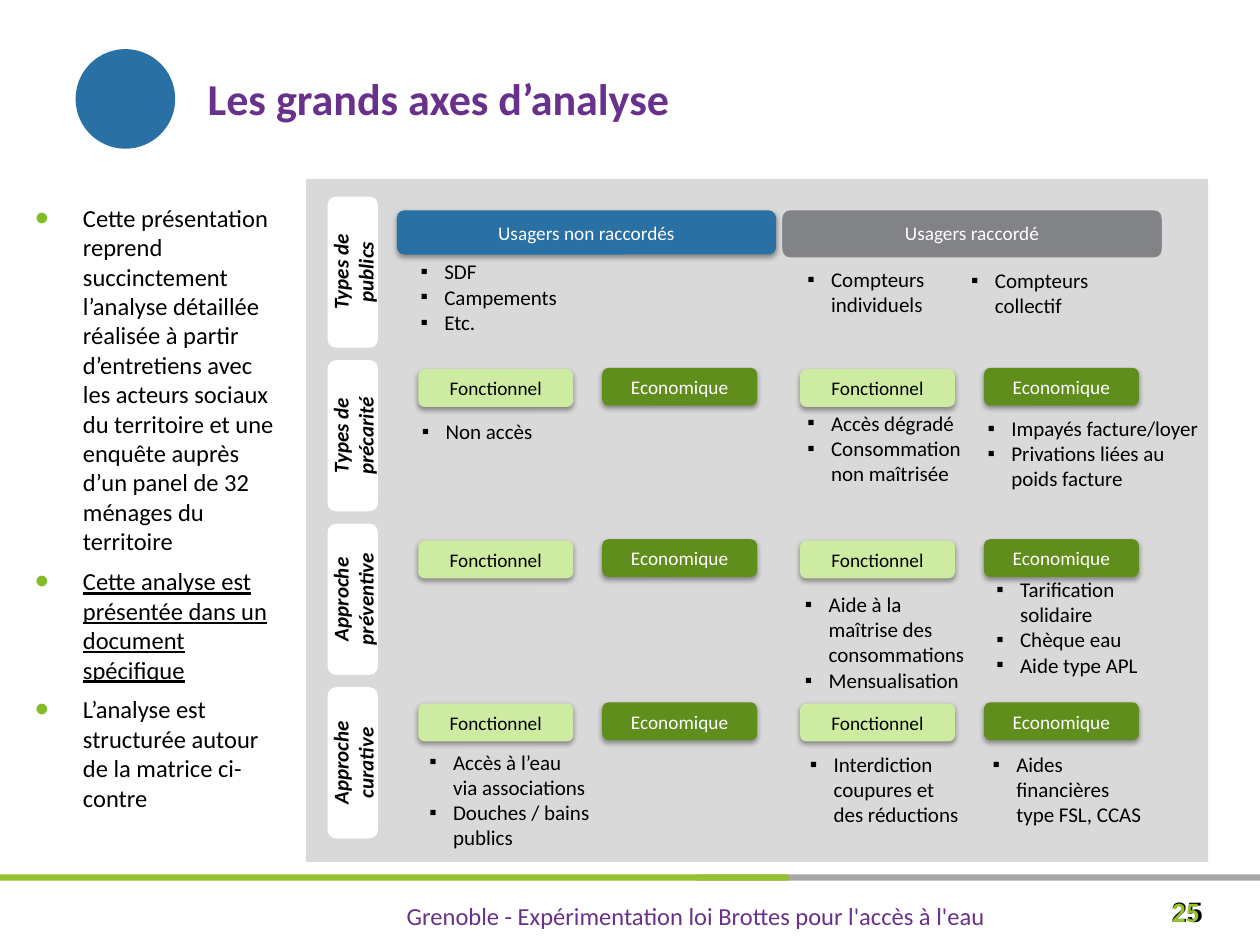
from itertools import product

from lxml.etree import SubElement
from pptx import Presentation
from pptx.dml.color import RGBColor
from pptx.enum.shapes import MSO_SHAPE
from pptx.enum.text import MSO_ANCHOR, PP_ALIGN
from pptx.oxml.ns import qn
from pptx.util import Inches, Pt

# The slide is a grid of 100 columns by 75 rows
COLUMNS, ROWS = 100, 75
deck = Presentation()
deck.slide_width, deck.slide_height = Inches(10), Inches(7.5)
COLUMN, ROW = deck.slide_width / COLUMNS, deck.slide_height / ROWS
slide = deck.slides.add_slide(deck.slide_layouts[6])

BLUE, GREEN, PURPLE, GREY = "2970A5", "94C12F", "69318B", "818386"
BLACK, WHITE = "000000", "FFFFFF"


def write(frame, lines, color, size, align=None, bullet=None, anchor=MSO_ANCHOR.MIDDLE,
          space=0, **style):
    """Fill a text frame; bullet is (character, indent in columns, {tag: attributes})."""
    frame.word_wrap = True
    frame.vertical_anchor = anchor
    for number, line in enumerate(lines):
        paragraph = frame.paragraphs[0] if number == 0 else frame.add_paragraph()
        paragraph.text = line
        if align:
            paragraph.alignment = align
        if number and space:
            paragraph.space_before = Pt(space)
        if bullet:
            character, indent, marks = bullet
            properties = paragraph._p.get_or_add_pPr()
            properties.set("marL", str(int(indent * COLUMN)))
            properties.set("indent", str(-int(indent * COLUMN)))
            if "color" in marks:
                clr = SubElement(properties, qn("a:buClr"))
                SubElement(clr, qn("a:srgbClr"), val=marks["color"])
                SubElement(properties, qn("a:buSzPct"), val=marks["size"])
            SubElement(properties, qn("a:buFont"), typeface="Arial")
            SubElement(properties, qn("a:buChar"), char=character)
        font = paragraph.runs[0].font
        for key, value in {"name": "Calibri", "size": Pt(size), **style}.items():
            setattr(font, key, value)
        font.color.rgb = RGBColor.from_string(color)


def block(kind, left, top, width, height, fill, blur=None):
    """Draw a filled shape without a line; blur in points adds a soft drop shadow."""
    shape = slide.shapes.add_shape(kind, int(left * COLUMN), int(top * ROW),
                                   int(width * COLUMN), int(height * ROW))
    shape.shadow.inherit = False
    shape.fill.solid()
    shape.fill.fore_color.rgb = RGBColor.from_string(fill)
    shape.line.fill.background()
    if blur is not None:
        effects = shape._element.spPr.find(qn("a:effectLst"))
        shadow = SubElement(effects, qn("a:outerShdw"), blurRad=str(Pt(blur)),
                            dist=str(Pt(1.6)), dir="5400000", rotWithShape="0")
        tone = SubElement(shadow, qn("a:srgbClr"), val=BLACK)
        SubElement(tone, qn("a:alpha"), val="38000")
    return shape


# Footer bars, title disc and matrix background
for kind, left, top, width, height, fill in [
    (MSO_SHAPE.RECTANGLE, 0, 69.4, 62.6, 0.5, GREEN),
    (MSO_SHAPE.RECTANGLE, 55.3, 69.4, 44.7, 0.5, "A6A6A6"),
    (MSO_SHAPE.OVAL, 6, 3.9, 7.9, 7.9, BLUE),
    (MSO_SHAPE.RECTANGLE, 24.3, 14.2, 71.6, 54.2, "D9D9D9"),
]:
    bar = block(kind, left, top, width, height, fill)
    if left == 55.3:
        # The green bar lies over the grey one
        green_bar = slide.shapes[0]._element
        bar._element.addnext(green_bar)

# Title, footer and the doubled page number
for left, top, width, height, line, color, size, style in [
    (15.5, 5.2, 84.5, 5.1, "Les grands axes d’analyse", PURPLE, 25.2, {"bold": True}),
    (31.3, 71, 59.6, 3.6, "Grenoble - Expérimentation loi Brottes pour l'accès à l'eau",
     PURPLE, 14, {}),
    (92, 70.5, 8, 4, "25", BLACK, 16, {"bold": True, "name": "Arial"}),
    (92, 70.5, 8, 4, "25", GREEN, 16, {"bold": True}),
]:
    box = slide.shapes.add_textbox(int(left * COLUMN), int(top * ROW),
                                   int(width * COLUMN), int(height * ROW))
    write(box.text_frame, [line], color, size, anchor=MSO_ANCHOR.TOP, **style)

# Introduction on the left
introduction = slide.shapes.add_textbox(int(1.8 * COLUMN), int(15.6 * ROW),
                                        int(21.5 * COLUMN), int(49.9 * ROW))
write(introduction.text_frame, [
    "Cette présentation reprend succinctement l’analyse détaillée réalisée à partir "
    "d’entretiens avec les acteurs sociaux du territoire et une enquête auprès d’un "
    "panel de 32 ménages du territoire",
    "Cette analyse est présentée dans un document spécifique",
    "L’analyse est structurée autour de la matrice ci-contre",
], BLACK, 14, bullet=("•", 3.8, {"color": "80BD26", "size": "160000"}),
    anchor=MSO_ANCHOR.TOP, space=6)
introduction.text_frame.paragraphs[1].runs[0].font.underline = True

# Column headers of the matrix
for left, audience, fill, blur in [(31.5, "Usagers non raccordés", BLUE, 3.1),
                                   (62.1, "Usagers raccordé", GREY, 0)]:
    header = block(MSO_SHAPE.ROUNDED_RECTANGLE, left, 16.7, 30.1, 3.5, fill, blur)
    write(header.text_frame, [audience], WHITE, 11, PP_ALIGN.CENTER)

# Row labels, turned to read upwards
for number, axis in enumerate(["Types de publics", "Types de précarité",
                               "Approche préventive", "Approche curative"]):
    label = block(MSO_SHAPE.ROUNDED_RECTANGLE, 22, 19.6 + 12.98 * number, 12, 4, WHITE)
    label.rotation = 270
    write(label.text_frame, [axis], BLACK, 12, PP_ALIGN.CENTER, bold=True, italic=True)

# Functional and economic tags under each audience
TAGS = [("Fonctionnel", 0, 0.1, "CEECA1", BLACK), ("Economique", 14.6, 0, "608E1C", WHITE)]
for top, left, (tag, shift, drop, fill, color) in product([29.2, 42.8, 55.75],
                                                          [33.2, 63.5], TAGS):
    button = block(MSO_SHAPE.ROUNDED_RECTANGLE, left + shift, top + drop, 12.3, 3, fill, 3.1)
    write(button.text_frame, [tag], color, 11, PP_ALIGN.CENTER)

# Contents of the matrix cells: left, top, width, height, items
for left, top, width, height, items in [
    (32.4, 21.5, 14.3, 4.1, ["SDF", "Campements", "Etc."]),
    (63.1, 21.1, 17.6, 4.1, ["Compteurs individuels"]),
    (76.1, 20.6, 16.2, 5.3, ["Compteurs collectif"]),
    (32.5, 32.2, 14.3, 4.1, ["Non accès"]),
    (63.1, 33.5, 14.3, 4.1, ["Accès dégradé", "Consommation non maîtrisée"]),
    (77.4, 33.9, 19.5, 4.1, ["Impayés facture/loyer", "Privations liées au poids facture"]),
    (62.9, 48.9, 15.2, 4.1, ["Aide à la maîtrise des consommations", "Mensualisation"]),
    (78.1, 47.7, 14.3, 4.1, ["Tarification solidaire", "Chèque eau", "Aide type APL"]),
    (33.1, 61.4, 14.7, 4.1, ["Accès à l’eau via associations", "Douches / bains publics"]),
    (63.3, 59.8, 14.3, 5.7, ["Interdiction coupures et des réductions"]),
    (77.8, 60.6, 14.3, 4.1, ["Aides financières type FSL, CCAS"]),
]:
    cell = slide.shapes.add_textbox(int(left * COLUMN), int(top * ROW),
                                    int(width * COLUMN), int(height * ROW))
    write(cell.text_frame, items, BLACK, 12, bullet=("▪", 1.88, {}))

deck.save("out.pptx")
